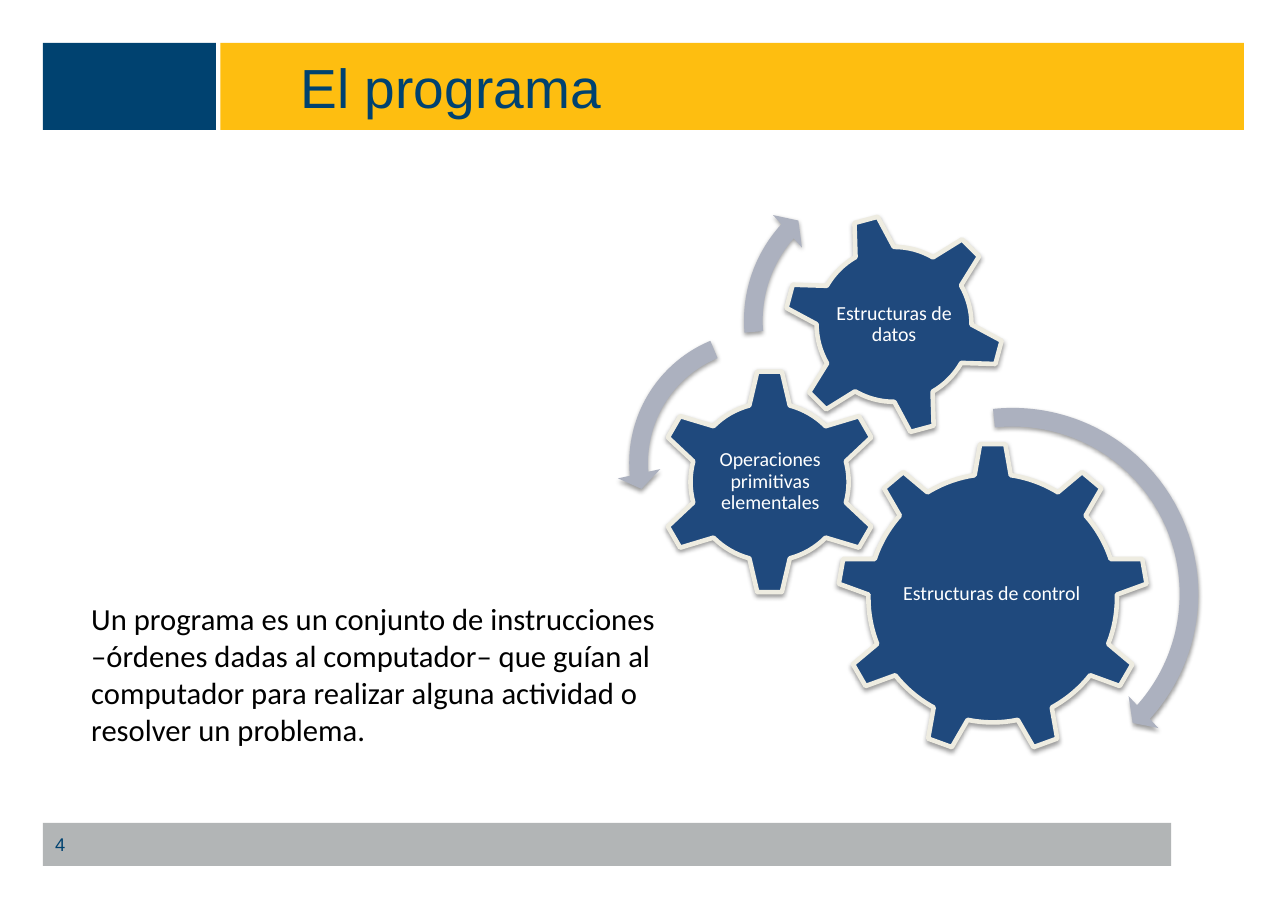
"""Build the slide "El programa" with three linked gears and turning arrows."""
from pptx import Presentation
from pptx.dml.color import RGBColor
from pptx.enum.shapes import MSO_SHAPE
from pptx.enum.text import MSO_ANCHOR, PP_ALIGN
from pptx.oxml import parse_xml
from pptx.oxml.ns import nsdecls, qn
from pptx.util import Inches, Pt

NAVY = RGBColor(0x00, 0x42, 0x70)
YELLOW = RGBColor(0xFE, 0xBE, 0x10)
GRAY = RGBColor(0xB2, 0xB5, 0xB6)
GEAR_BLUE = RGBColor(0x1F, 0x49, 0x7D)
CREAM = RGBColor(0xEE, 0xEC, 0xE1)
ARROW_GRAY = RGBColor(0xAC, 0xB1, 0xBF)
WHITE = RGBColor(0xFF, 0xFF, 0xFF)
BLACK = RGBColor(0x00, 0x00, 0x00)

TITLE = "El programa"
PAGE_NUMBER = "4"
DEFINITION = (
    "Un programa es un conjunto de instrucciones –órdenes dadas al computador– "
    "que guían al computador para realizar alguna actividad o resolver un problema."
)
BANDS = [
    (0.39, 7.47, 10.24, 0.39, GRAY),
    (0.39, 0.39, 1.57, 0.79, NAVY),
    (2, 0.39, 9.29, 0.79, YELLOW),
]
# GEARS_PLACEHOLDER
GEARS = [
    ("Estructuras de control", MSO_SHAPE.GEAR_9, 7.6, 4.02, 2.82, 0, (8.16, 4.67, 1.68, 1.45)),
    ("Operaciones primitivas elementales", MSO_SHAPE.GEAR_6, 5.96, 3.35, 2.05, 0, (6.48, 3.87, 1.02, 1.01)),
    ("Estructuras de datos", MSO_SHAPE.GEAR_6, 7.11, 1.94, 2.01, 345, (7.55, 2.38, 1.13, 1.13)),
]
ARROWS = [
    (MSO_SHAPE.CIRCULAR_ARROW, 7.39, 3.59, 3.6, (0.047, 2.99, 25.267, 158.388, 0.055)),
    (MSO_SHAPE.LEFT_CIRCULAR_ARROW, 5.6, 2.89, 2.62, (0.065, 4.3, 104.891, 148.378, 0.075)),
    (MSO_SHAPE.CIRCULAR_ARROW, 6.64, 1.5, 2.82, (0.06, 3.941, 133.138, 105.082, 0.07)),
]


def add_figure(page, kind, left, top, width, height, fill, outline=None):
    shape = page.shapes.add_shape(kind, Inches(left), Inches(top), Inches(width), Inches(height))
    shape.shadow.inherit = False
    shape.fill.solid()
    shape.fill.fore_color.rgb = fill
    if outline is None:
        shape.line.fill.background()
    else:
        shape.line.color.rgb = outline
        shape.line.width = Pt(3)
    return shape


def add_shadow(shape):
    effects = shape._element.spPr.find(qn("a:effectLst"))
    effects.append(parse_xml(
        f'<a:outerShdw {nsdecls("a")} blurRad="{Pt(3.1)}" dist="{Pt(1.6)}" dir="5400000" rotWithShape="0">'
        '<a:srgbClr val="000000"><a:alpha val="38000"/></a:srgbClr></a:outerShdw>'
    ))


def add_text(page, text, left, top, width, height, *, size, color, font="Calibri",
             anchor=MSO_ANCHOR.MIDDLE, align=PP_ALIGN.LEFT, spacing=1.0, inset=(0.11, 0.05)):
    box = page.shapes.add_textbox(Inches(left), Inches(top), Inches(width), Inches(height))
    frame = box.text_frame
    frame.word_wrap = True
    frame.vertical_anchor = anchor
    frame.margin_left = frame.margin_right = Inches(inset[0])
    frame.margin_top = frame.margin_bottom = Inches(inset[1])
    para = frame.paragraphs[0]
    para.alignment = align
    para.line_spacing = spacing
    span = para.add_run()
    span.text = text
    span.font.name = font
    span.font.size = Pt(size)
    span.font.color.rgb = color


def main():
    deck = Presentation()
    deck.slide_width, deck.slide_height = Inches(11.69), Inches(8.27)
    page = deck.slides.add_slide(deck.slide_layouts[6])

    for left, top, width, height, fill in BANDS:
        add_figure(page, MSO_SHAPE.RECTANGLE, left, top, width, height, fill)
    add_text(page, TITLE, 2.62, 0.39, 8.68, 0.79, size=36, color=NAVY, font="Arial")
    add_text(page, PAGE_NUMBER, 0.39, 7.47, 2.73, 0.39, size=12, color=NAVY, font="Arial")

    for label, kind, left, top, side, rotation, label_area in GEARS:
        gear = add_figure(page, kind, left, top, side, side, GEAR_BLUE, CREAM)
        gear.rotation = rotation
        add_shadow(gear)
        add_text(page, label, *label_area, size=13, color=WHITE,
                 align=PP_ALIGN.CENTER, spacing=0.9, inset=(0.02, 0.02))

    for kind, left, top, side, adjustments in ARROWS:
        arrow = add_figure(page, kind, left, top, side, side, ARROW_GRAY)
        for index, value in enumerate(adjustments):
            arrow.adjustments[index] = value
        add_shadow(arrow)

    add_text(page, DEFINITION, 0.73, 5.4, 5.37, 1.45, size=20, color=BLACK,
             anchor=MSO_ANCHOR.TOP, inset=(0.1, 0.05))
    deck.save("out.pptx")


if __name__ == "__main__":
    main()
